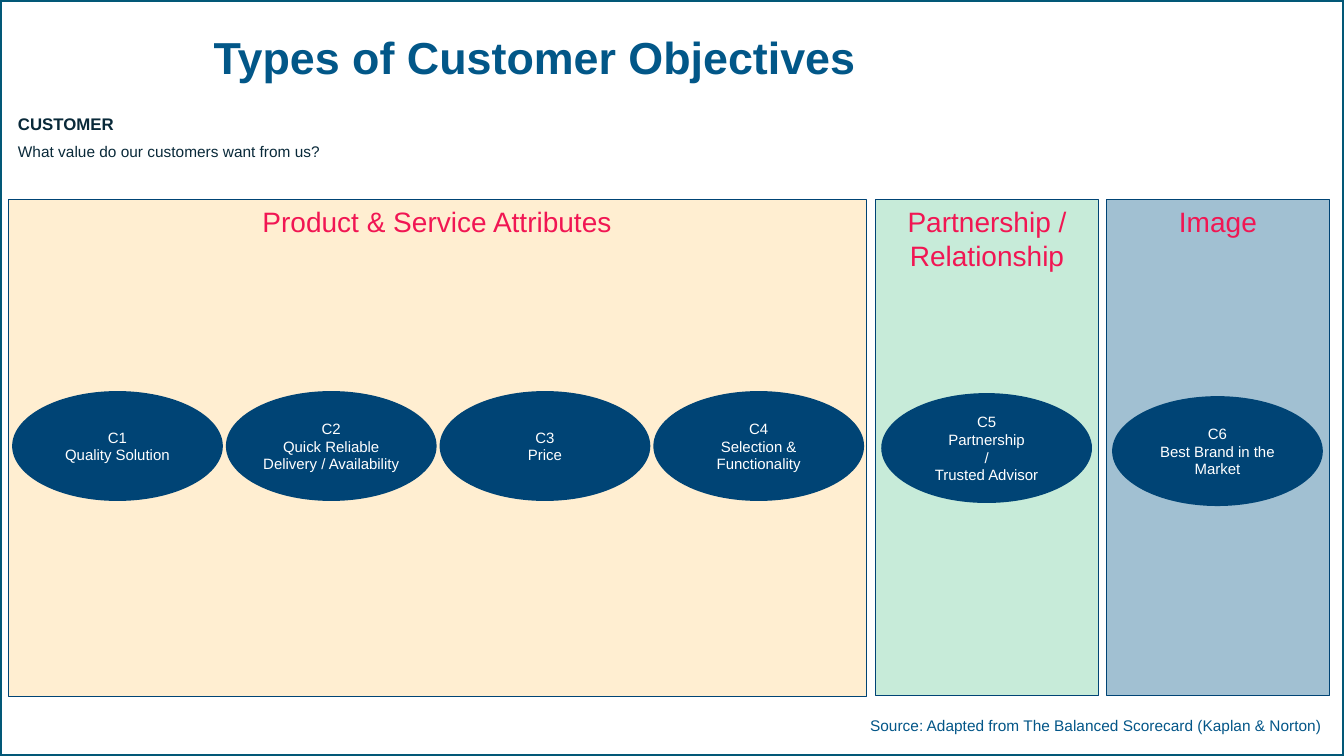
from lxml import etree
from pptx import Presentation
from pptx import util as u
from pptx.dml import color
from pptx.enum import shapes, text
from pptx.oxml import ns

COLORS = {
    "frame": "025877", "navy": "004475", "title": "025788", "heading": "F11653",
    "dark": "092939", "source": "035688", "white": "FFFFFF",
    "cream": "FFAA1B", "mint": "C7EBD9", "blue": "005687",
}
OVAL_WIDTH, OVAL_HEIGHT = 2.09, 1.09
PRODUCT = ["C1\nQuality Solution", "C2\nQuick Reliable Delivery / Availability",
           "C3\nPrice", "C4\nSelection & Functionality"]
PARTNERSHIP = ["C5\nPartnership\n/\nTrusted Advisor"]
IMAGE = ["C6\nBest Brand in the Market"]


def rgb(name):
    """Return the named palette colour."""
    return color.RGBColor.from_string(COLORS[name])


def write(shape, content, size, ink, bold=False, align="CENTER", anchor="TOP",
          margins=(0.1, 0.05, 0.1, 0.05), spacing=None):
    """Fill a shape with one formatted paragraph per line of content."""
    frame = shape.text_frame
    frame.word_wrap = True
    frame.vertical_anchor = getattr(text.MSO_ANCHOR, anchor)
    sides = ("left", "top", "right", "bottom")
    for side, margin in zip(sides, margins):
        setattr(frame, f"margin_{side}", u.Inches(margin))
    for index, line in enumerate(content.split("\n")):
        paragraph = frame.paragraphs[0] if index == 0 else frame.add_paragraph()
        paragraph.alignment = getattr(text.PP_ALIGN, align)
        paragraph.line_spacing = spacing
        run = paragraph.add_run()
        run.text = line
        run.font.name, run.font.size, run.font.bold = "Arial", u.Pt(size), bold
        run.font.color.rgb = rgb(ink)
    return frame


def add_box(slide, box, kind="RECTANGLE", fill=None, opacity=100, line=None, weight=0.75):
    """Add a preset shape with an optional translucent fill and outline."""
    shape = slide.shapes.add_shape(getattr(shapes.MSO_SHAPE, kind), *map(u.Inches, box))
    shape.shadow.inherit = False
    if fill:
        shape.fill.solid()
        shape.fill.fore_color.rgb = rgb(fill)
        if opacity < 100:
            tint = shape.fill._xPr.find(".//" + ns.qn("a:srgbClr"))
            etree.SubElement(tint, ns.qn("a:alpha"), val=str(opacity * 1000))
    else:
        shape.fill.background()
    if line:
        shape.line.color.rgb = rgb(line)
        shape.line.width = u.Pt(weight)
    else:
        shape.line.fill.background()
    return shape


def add_label(slide, box, content, **style):
    """Add a text box with formatted text."""
    return write(slide.shapes.add_textbox(*map(u.Inches, box)), content, **style)


def add_column(slide, box, heading, fill, opacity, objectives, offset, pitch=0):
    """Draw a category panel with its heading and a row of objective ovals."""
    left, top, _, _ = box
    panel = add_box(slide, box, fill=fill, opacity=opacity, line="navy")
    write(panel, heading, size=20, ink="heading")
    for index, objective in enumerate(objectives):
        place = (left + offset[0] + index * pitch, top + offset[1], OVAL_WIDTH, OVAL_HEIGHT)
        oval = add_box(slide, place, kind="OVAL", fill="navy")
        write(oval, objective, size=10.7, ink="white", anchor="MIDDLE",
              margins=(0, 0.05, 0, 0.05))


def add_header(slide, box):
    """Place the title and the customer question at the top."""
    left, top, _, _ = box
    add_label(slide, (left + 0.37, top + 0.28, 9.87, 0.64), "Types of Customer Objectives",
              size=32, ink="title", bold=True, anchor="MIDDLE", spacing=0.9)
    frame = add_label(slide, (left + 0.08, top + 1.08, 5.94, 0.58),
                      "CUSTOMER\nWhat value do our customers want from us?",
                      size=11, ink="dark", align="LEFT")
    customer, question = frame.paragraphs
    customer.runs[0].font.size = u.Pt(12)
    customer.runs[0].font.bold = True
    question.space_before = u.Pt(6)


def main():
    """Build and save the customer objectives slide."""
    presentation = Presentation()
    presentation.slide_width, presentation.slide_height = u.Inches(13.33), u.Inches(7.5)
    slide = presentation.slides.add_slide(presentation.slide_layouts[6])
    add_box(slide, (0, 0, 13.33, 7.5), line="frame", weight=3)
    add_header(slide, (0, 0, 13.33, 1.98))
    add_column(slide, (0.08, 1.98, 8.51, 4.93), "Product & Service Attributes",
               "cream", 20, PRODUCT, (0.04, 1.9), pitch=2.12)
    add_column(slide, (8.68, 1.98, 2.22, 4.92), "Partnership / Relationship",
               "mint", 100, PARTNERSHIP, (0.06, 1.92))
    add_column(slide, (10.97, 1.98, 2.22, 4.92), "Image",
               "blue", 37, IMAGE, (0.06, 1.95))
    add_label(slide, (8.56, 7.09, 4.62, 0.2),
              "Source: Adapted from The Balanced Scorecard (Kaplan & Norton)",
              size=11, ink="source", margins=(0, 0.01, 0, 0))
    presentation.save("out.pptx")


if __name__ == "__main__":
    main()
